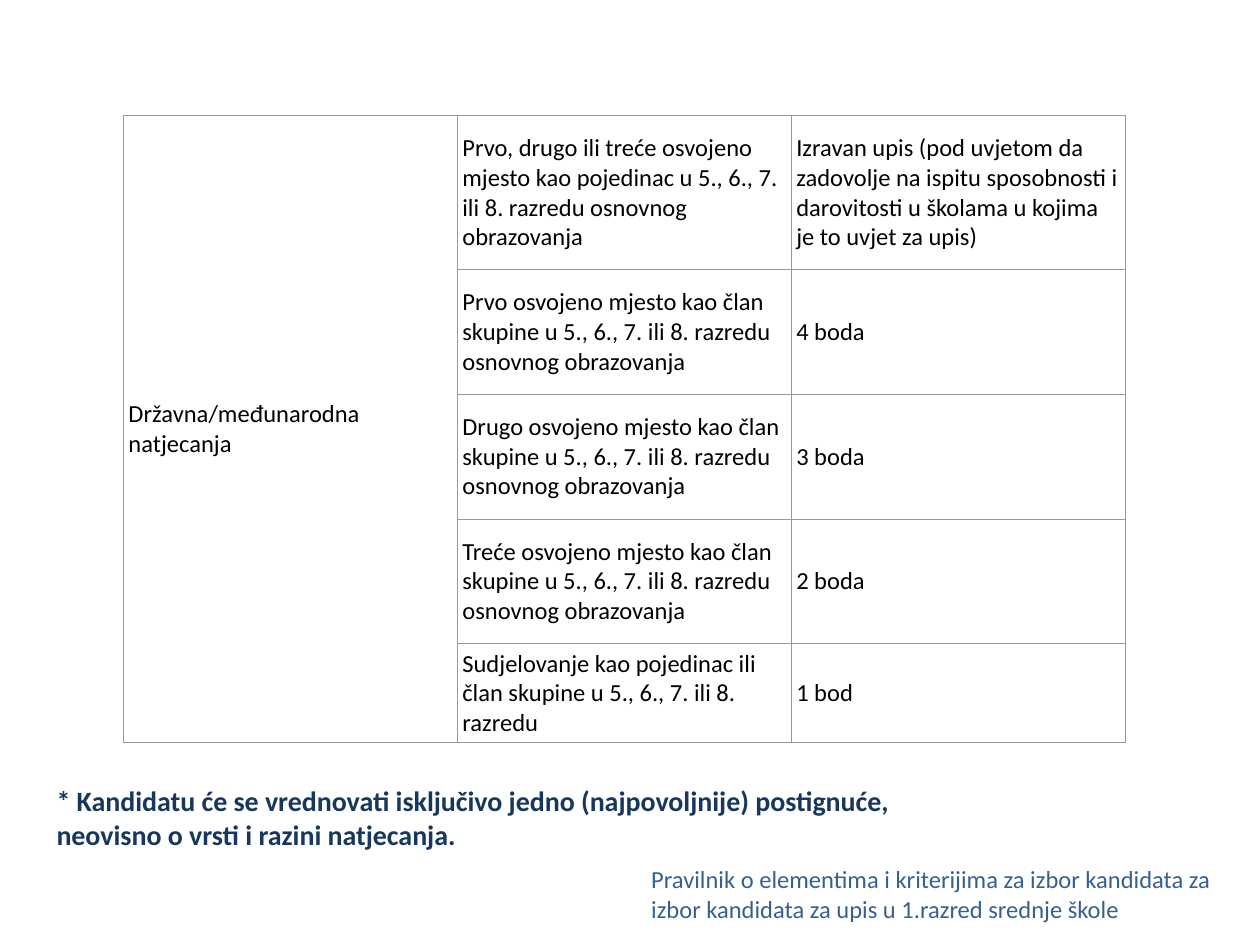
from lxml import etree
from pptx import Presentation
from pptx import util as u
from pptx.dml.color import RGBColor
from pptx.enum import text
from pptx.oxml import ns

GROUP = "osvojeno mjesto kao član skupine u 5., 6., 7. ili 8. razredu osnovnog obrazovanja"

# Achievement, points, row height
AWARDS = [
    ("Prvo, drugo ili treće osvojeno mjesto kao pojedinac u 5., 6., 7. ili 8. razredu "
     "osnovnog obrazovanja",
     "Izravan upis (pod uvjetom da zadovolje na ispitu sposobnosti i darovitosti "
     "u školama u kojima je to uvjet za upis)", 1.22),
    (f"Prvo {GROUP}", "4 boda", 0.99),
    (f"Drugo {GROUP}", "3 boda", 0.99),
    (f"Treće {GROUP}", "2 boda", 0.99),
    ("Sudjelovanje kao pojedinac ili član skupine u 5., 6., 7. ili 8. razredu", "1 bod", 0.76),
]


def color(value):
    return RGBColor.from_string(value)


class SlideBuilder:
    font_name = "Calibri"
    text_color = "000000"
    border_color = "999999"
    border_width = u.Pt(0.6)
    cell_margin = u.Inches(0.04)

    def __init__(self, slide):
        self.slide = slide

    def style(self, paragraph, size, value, bold=False):
        font = paragraph.font
        font.name = self.font_name
        font.size = u.Pt(size)
        font.bold = bold
        font.color.rgb = color(value)

    def text_box(self, content, left, top, width, height, size, value, bold=False):
        shape = self.slide.shapes.add_textbox(
            *(u.Inches(length) for length in (left, top, width, height)))
        frame = shape.text_frame
        frame.word_wrap = True
        frame.text = content
        self.style(frame.paragraphs[0], size, value, bold)

    def border(self, cell):
        properties = cell._tc.get_or_add_tcPr()
        for position, side in enumerate(("lnL", "lnR", "lnT", "lnB")):
            line = etree.Element(ns.qn(f"a:{side}"), w=str(self.border_width))
            fill = etree.SubElement(line, ns.qn("a:solidFill"))
            etree.SubElement(fill, ns.qn("a:srgbClr"), val=self.border_color)
            properties.insert(position, line)

    def cell(self, cell, content):
        cell.text = content
        cell.vertical_anchor = text.MSO_ANCHOR.MIDDLE
        cell.margin_left = cell.margin_right = self.cell_margin
        cell.margin_top = cell.margin_bottom = self.cell_margin
        cell.fill.background()
        self.border(cell)
        self.style(cell.text_frame.paragraphs[0], 14, self.text_color)

    def table(self, heading, rows, left, top, width):
        heights = [u.Inches(row[-1]) for row in rows]
        table = self.slide.shapes.add_table(
            len(rows), 3, u.Inches(left), u.Inches(top), u.Inches(width), sum(heights)).table
        table.first_row = table.horz_banding = False
        for index, (achievement, points, _) in enumerate(rows):
            table.rows[index].height = heights[index]
            label = heading if index == 0 else ""
            for column, content in enumerate((label, achievement, points)):
                self.cell(table.cell(index, column), content)
        # The competition level spans every row
        table.cell(0, 0).merge(table.cell(len(rows) - 1, 0))


def main():
    presentation = Presentation()
    presentation.slide_width = u.Inches(10)
    presentation.slide_height = u.Inches(7.5)
    builder = SlideBuilder(presentation.slides.add_slide(presentation.slide_layouts[6]))

    # Note and source
    builder.text_box(
        "* Kandidatu će se vrednovati isključivo jedno (najpovoljnije) postignuće, "
        "neovisno o vrsti i razini natjecanja.",
        0.35, 6.17, 7.32, 0.64, 16, "17375E", bold=True)
    builder.text_box(
        "Pravilnik o elementima i kriterijima za izbor kandidata za izbor kandidata "
        "za upis u 1.razred srednje škole",
        5.07, 6.81, 4.93, 0.57, 14, "376092")

    # Points table
    builder.table("Državna/međunarodna natjecanja", AWARDS, 0.98, 0.92, 7.95)

    presentation.save("out.pptx")


if __name__ == "__main__":
    main()
